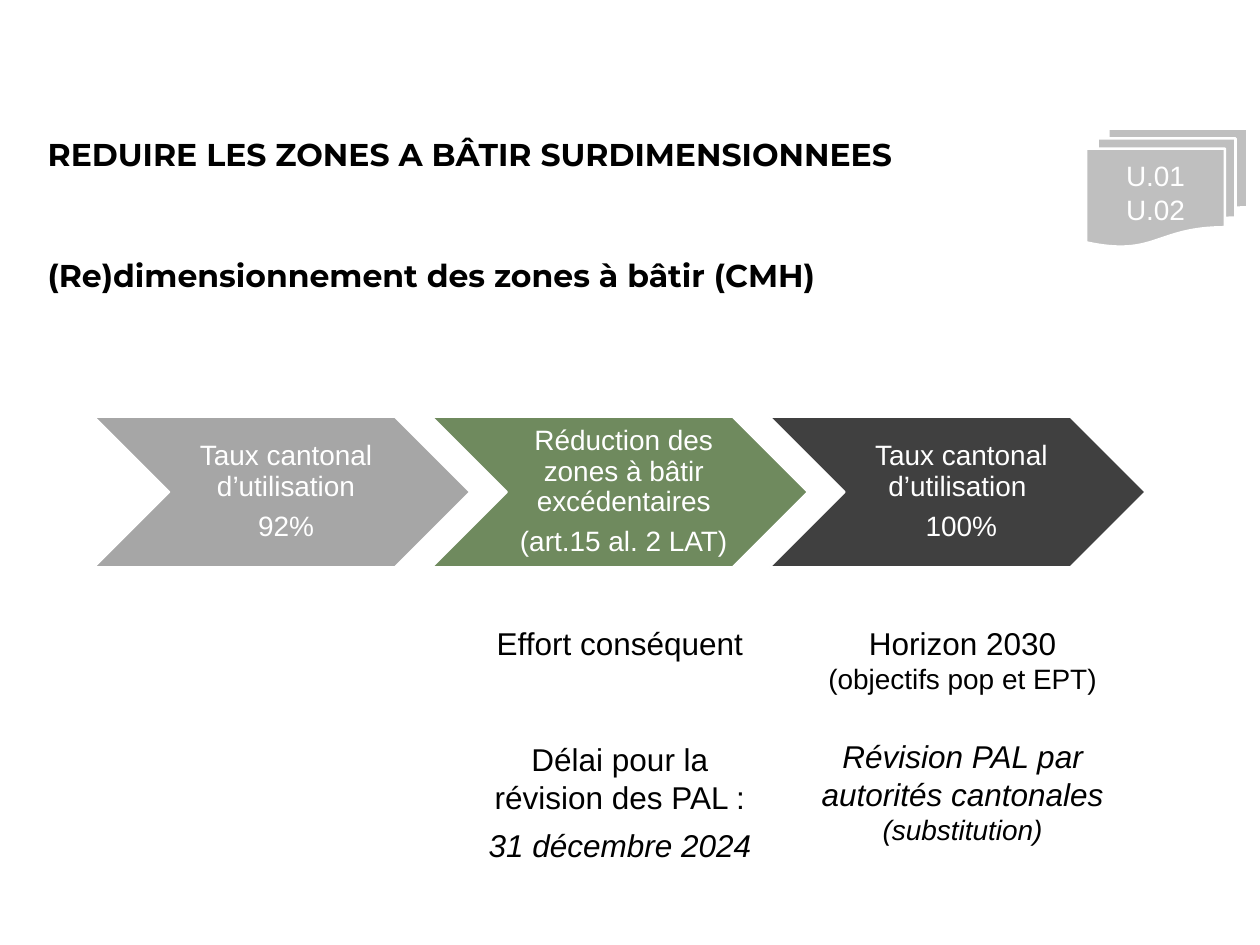
from pptx import Presentation
from pptx.dml.color import RGBColor
from pptx.enum.shapes import MSO_SHAPE
from pptx.enum.text import MSO_ANCHOR, PP_ALIGN
from pptx.util import Inches, Pt

BLACK = RGBColor(0x00, 0x00, 0x00)
WHITE = RGBColor(0xFF, 0xFF, 0xFF)
PALE_GREY = RGBColor(0xBF, 0xBF, 0xBF)
MID_GREY = RGBColor(0xA6, 0xA6, 0xA6)
GREEN = RGBColor(0x6F, 0x8A, 0x5E)
DARK_GREY = RGBColor(0x40, 0x40, 0x40)

HEADING = {"name": "Montserrat", "size": Pt(18), "bold": True}
LABEL = {"name": "Arial", "size": Pt(16)}
NOTE = {"name": "Arial", "size": Pt(18)}
NOTE_ITALIC = NOTE | {"italic": True}
LABEL_ITALIC = LABEL | {"italic": True}

CENTRED = {"alignment": PP_ALIGN.CENTER}
STEP_LINE = CENTRED | {"line_spacing": 0.9, "space_after": Pt(5.6)}

STEP_LEFT, STEP_TOP, STEP_PITCH = 0.75, 3.31, 2.68
STEP_WIDTH, STEP_HEIGHT = 2.98, 1.19
STEP_TEXT_OFFSET, STEP_TEXT_WIDTH = 0.6, 1.79


def apply_format(target, values):
    for attribute, value in values.items():
        setattr(target, attribute, value)


def write_lines(frame, lines, color, insets=None):
    """Fill a frame with (text, font format, paragraph format) lines."""
    frame.word_wrap = True
    for side, inset in (insets or {}).items():
        setattr(frame, f"margin_{side}", Inches(inset))
    for index, (text, font, layout) in enumerate(lines):
        paragraph = frame.add_paragraph() if index else frame.paragraphs[0]
        paragraph.text = text
        apply_format(paragraph, layout)
        apply_format(paragraph.font, font)
        paragraph.font.color.rgb = color


def add_text(slide, box, lines, color=BLACK, insets=None):
    frame = slide.shapes.add_textbox(*map(Inches, box)).text_frame
    write_lines(frame, lines, color, insets)
    return frame


def add_filled_shape(slide, kind, box, fill, line_width):
    shape = slide.shapes.add_shape(kind, *map(Inches, box))
    shape.shadow.inherit = False
    shape.fill.solid()
    shape.fill.fore_color.rgb = fill
    shape.line.color.rgb = WHITE
    shape.line.width = Pt(line_width)
    return shape


def add_reference_sheets(slide, references):
    sheets = add_filled_shape(slide, MSO_SHAPE.FLOWCHART_MULTIDOCUMENT,
                              (8.62, 1.02, 1.28, 0.94), PALE_GREY, 1.5)
    sheets.text_frame.vertical_anchor = MSO_ANCHOR.MIDDLE
    write_lines(sheets.text_frame,
                [(reference, LABEL, CENTRED) for reference in references],
                WHITE, {"top": 0})


def add_step(slide, position, fill, texts):
    left = STEP_LEFT + position * STEP_PITCH
    add_filled_shape(slide, MSO_SHAPE.CHEVRON,
                     (left, STEP_TOP, STEP_WIDTH, STEP_HEIGHT), fill, 1)
    frame = add_text(
        slide,
        (left + STEP_TEXT_OFFSET, STEP_TOP, STEP_TEXT_WIDTH, STEP_HEIGHT),
        [(text, LABEL, STEP_LINE) for text in texts],
        WHITE,
        {"left": 0.07, "top": 0.02, "right": 0.02, "bottom": 0.02},
    )
    frame.vertical_anchor = MSO_ANCHOR.MIDDLE


def main():
    presentation = Presentation()
    presentation.slide_width = Inches(10)
    presentation.slide_height = Inches(7.5)
    slide = presentation.slides.add_slide(presentation.slide_layouts[6])

    add_text(slide, (0.28, 2.02, 8.03, 0.63),
             [("(Re)dimensionnement des zones à bâtir (CMH)", HEADING,
               {"line_spacing": 0.9})])
    add_text(slide, (0.28, 1.02, 9.29, 0.4),
             [("REDUIRE LES ZONES A BÂTIR SURDIMENSIONNEES", HEADING, {})])
    add_reference_sheets(slide, ["U.01", "U.02"])

    steps = [
        (MID_GREY, ["Taux cantonal d’utilisation", "92%"]),
        (GREEN, ["Réduction des zones à bâtir excédentaires",
                 "(art.15 al. 2 LAT)"]),
        (DARK_GREY, ["Taux cantonal d’utilisation ", "100%"]),
    ]
    for position, (fill, texts) in enumerate(steps):
        add_step(slide, position, fill, texts)

    add_text(slide, (3.74, 4.9, 2.36, 2.04), [
        ("Effort conséquent", NOTE, CENTRED | {"space_after": Pt(45)}),
        ("Délai pour la révision des PAL :", NOTE,
         CENTRED | {"space_after": Pt(6)}),
        ("31 décembre 2024", NOTE_ITALIC, CENTRED),
    ])
    add_text(slide, (6.34, 4.9, 2.6, 1.88), [
        ("Horizon 2030", NOTE, CENTRED),
        ("(objectifs pop et EPT)", LABEL, CENTRED | {"space_after": Pt(24)}),
        ("Révision PAL par autorités cantonales", NOTE_ITALIC, CENTRED),
        ("(substitution)", LABEL_ITALIC, CENTRED),
    ])
    presentation.save("out.pptx")


if __name__ == "__main__":
    main()
